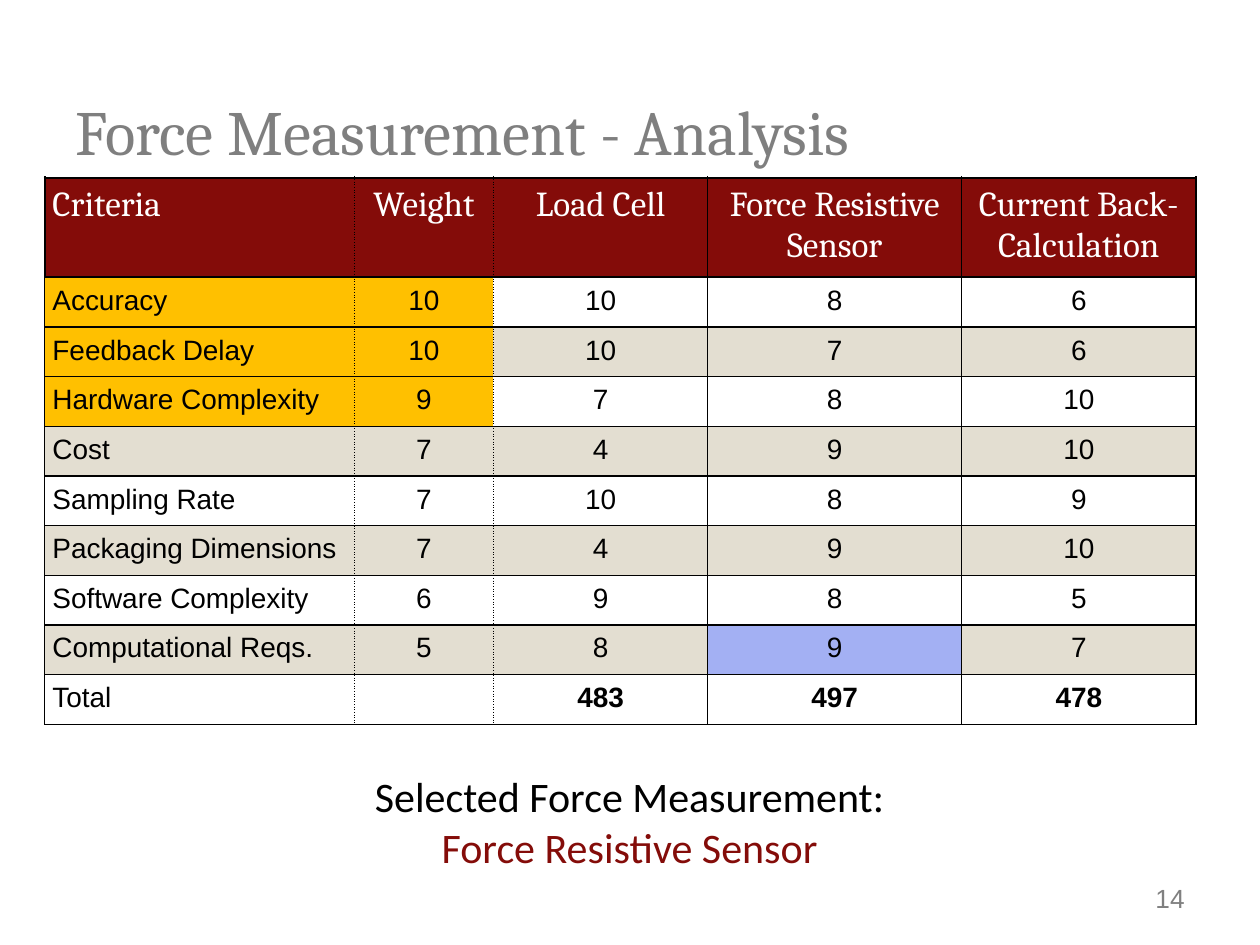
from lxml import etree
from pptx import Presentation
from pptx.dml.color import RGBColor
from pptx.enum import text as t
from pptx.oxml import ns
from pptx.util import Pt

# Content
TITLE = "Force Measurement - Analysis"
HEADER = ["Criteria", "Weight", "Load Cell", "Force Resistive Sensor", "Current Back-Calculation"]
SCORES = [
    ("Accuracy", 10, 10, 8, 6),
    ("Feedback Delay", 10, 10, 7, 6),
    ("Hardware Complexity", 9, 7, 8, 10),
    ("Cost", 7, 4, 9, 10),
    ("Sampling Rate", 7, 10, 8, 9),
    ("Packaging Dimensions", 7, 4, 9, 10),
    ("Software Complexity", 6, 9, 8, 5),
    ("Computational Reqs.", 5, 8, 9, 7),
]
TOTAL = ("Total", "", 483, 497, 478)
CONCLUSION = [("Selected Force Measurement:", "000000"), ("Force Resistive Sensor", "840C09")]
PAGE = "14"

# Look
RED, GOLD, BEIGE, BLUE = "840C09", "FFC000", "E3DED1", "A3B0F3"
COLUMN_WIDTHS = [177, 79.5, 122.5, 145, 134]
HEADER_HEIGHT, ROW_HEIGHT = 57, 28.4
TOP_CRITERIA = 3       # heaviest criteria, in gold
MARKED_CELL = (8, 3)
INSET = 4.5
LEFT, CENTER, RIGHT = t.PP_ALIGN.LEFT, t.PP_ALIGN.CENTER, t.PP_ALIGN.RIGHT


def rgb(value):
    return RGBColor.from_string(value)


def write(paragraph, content, *, size, font, color="000000", align=LEFT, bold=False):
    paragraph.alignment = align
    if not content:  # keeps an empty line at the given size
        etree.SubElement(paragraph._p, ns.qn("a:endParaRPr"), sz=str(size * 100))
        return
    run = paragraph.add_run()
    run.text = content
    run.font.size, run.font.name, run.font.bold = Pt(size), font, bold
    run.font.color.rgb = rgb(color)


def add_box(slide, left, top, width, height):
    frame = slide.shapes.add_textbox(Pt(left), Pt(top), Pt(width), Pt(height)).text_frame
    frame.word_wrap = True
    return frame


def add_border(cell, side, width, dash):
    line = etree.SubElement(cell._tc.get_or_add_tcPr(), ns.qn(f"a:ln{side}"), w=str(Pt(width)))
    fill = etree.SubElement(line, ns.qn("a:solidFill"))
    etree.SubElement(fill, ns.qn("a:srgbClr"), val="000000")
    etree.SubElement(line, ns.qn("a:prstDash"), val=dash)


def border_cell(cell, row, column):
    heavy = 1.5 if row == 0 else 0.75
    last = len(HEADER) - 1
    add_border(cell, "L", heavy if column == 0 else 0.75, "sysDot" if column in (1, 2) else "solid")
    add_border(cell, "R", heavy if column == last else 0.75, "sysDot" if column in (0, 1) else "solid")
    add_border(cell, "T", 1.5 if row <= 1 else 0.75, "solid")
    add_border(cell, "B", heavy, "solid")


def cell_color(row, column):
    if row == 0:
        return RED
    if (row, column) == MARKED_CELL:
        return BLUE
    if row <= TOP_CRITERIA and column < 2:
        return GOLD
    return BEIGE if row % 2 == 0 else None


def add_score_table(slide, left, top):
    rows = [HEADER, *SCORES, TOTAL]
    heights = [HEADER_HEIGHT] + [ROW_HEIGHT] * (len(rows) - 1)
    table = slide.shapes.add_table(len(rows), len(HEADER), Pt(left), Pt(top),
                                   Pt(sum(COLUMN_WIDTHS)), Pt(sum(heights))).table
    table.horz_banding = False
    for column, width in zip(table.columns, COLUMN_WIDTHS):
        column.width = Pt(width)
    for r, (values, height) in enumerate(zip(rows, heights)):
        table.rows[r].height = Pt(height)
        style = dict(size=20, font="Cambria", color="FFFFFF") if r == 0 else dict(size=16, font="Arial")
        for c, value in enumerate(values):
            cell = table.cell(r, c)
            cell.margin_left = cell.margin_right = cell.margin_top = cell.margin_bottom = Pt(INSET)
            border_cell(cell, r, c)
            color = cell_color(r, c)
            if color:
                cell.fill.solid()
                cell.fill.fore_color.rgb = rgb(color)
            else:
                cell.fill.background()
            write(cell.text_frame.paragraphs[0], str(value), align=CENTER if c else LEFT,
                  bold=values is TOTAL and c > 1, **style)


def main():
    deck = Presentation()
    deck.slide_width, deck.slide_height = Pt(720), Pt(540)
    slide = deck.slides.add_slide(deck.slide_layouts[5])

    # Title
    title = slide.shapes.title
    title.left, title.top, title.width, title.height = Pt(36), Pt(48), Pt(648), Pt(52.5)
    title.text_frame.vertical_anchor = t.MSO_ANCHOR.MIDDLE
    write(title.text_frame.paragraphs[0], TITLE, size=36, font="Cambria", color="7F7F7F")

    # Scores
    add_score_table(slide, 25.5, 101.5)

    # Conclusion
    conclusion = add_box(slide, 198.5, 437, 322.5, 65.5)
    for i, (line, color) in enumerate(CONCLUSION):
        paragraph = conclusion.add_paragraph() if i else conclusion.paragraphs[0]
        write(paragraph, line, size=24, font="Calibri", color=color, align=CENTER)

    # Page number
    page = add_box(slide, 508.5, 500.5, 175.5, 29)
    write(page.paragraphs[0], PAGE, size=15, font="Arial", color="808080", align=RIGHT)

    deck.save("out.pptx")


if __name__ == "__main__":
    main()
